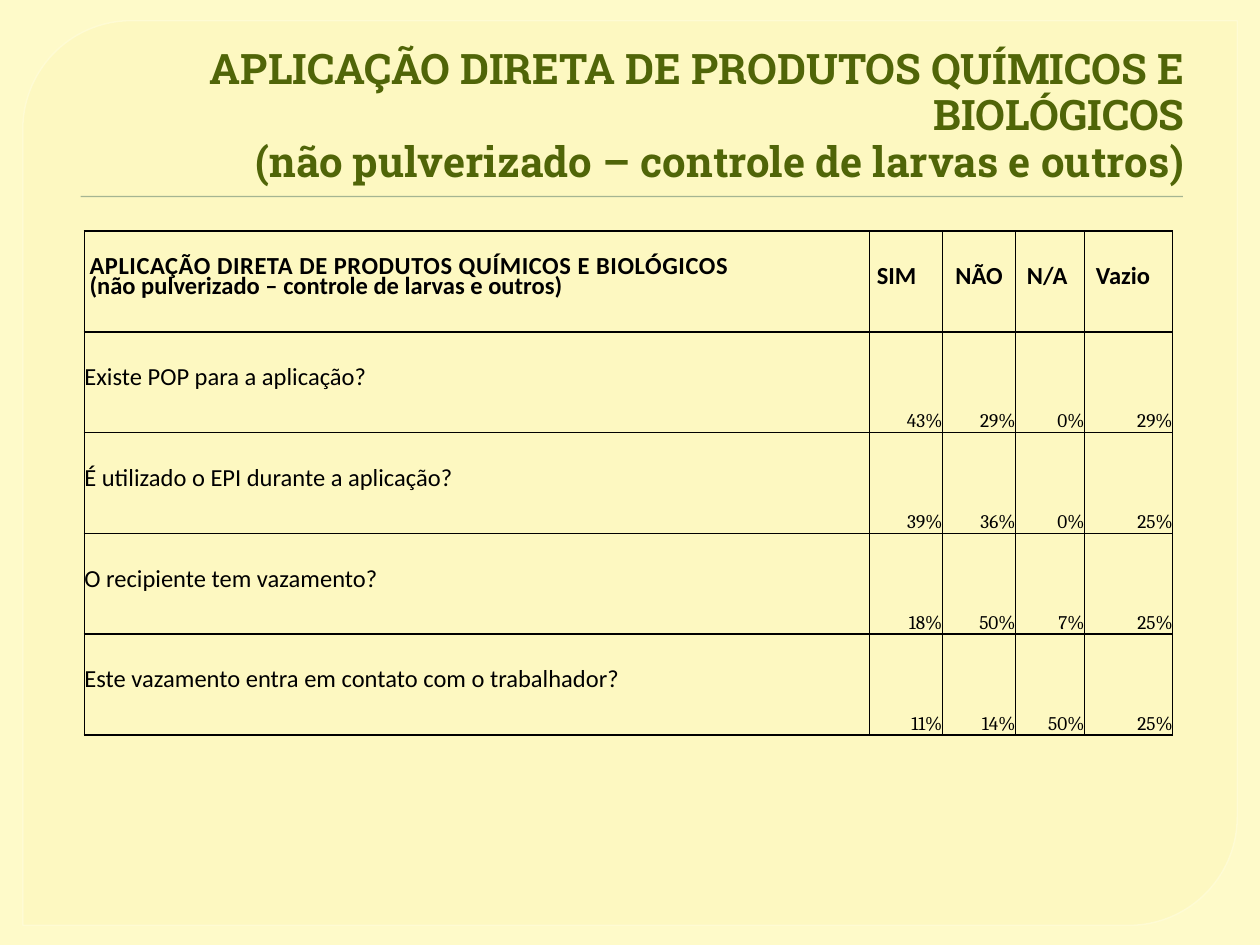
from lxml import etree
from pptx import Presentation
from pptx.dml import color
from pptx.enum import shapes, text
from pptx.oxml import ns
from pptx.util import Pt

HUES = {"page": "FEFAC9", "panel": "FDF8BE", "edge": "FFFCD6",
        "rule": "A5B592", "title": "506508", "ink": "000000"}
LEFT, MID, RIGHT = (text.PP_ALIGN.LEFT, text.PP_ALIGN.CENTER,
                    text.PP_ALIGN.RIGHT)
CENTER, BASE = text.MSO_ANCHOR.MIDDLE, text.MSO_ANCHOR.BOTTOM

TITLE = ("APLICAÇÃO DIRETA DE PRODUTOS QUÍMICOS E BIOLÓGICOS",
         "(não pulverizado – controle de larvas e outros)")
# heading, column width, left inset, alignment
COLS = [(TITLE, 448.6, 3, LEFT), (("SIM",), 41.8, 4.3, LEFT),
        (("NÃO",), 41.8, 0, MID), (("N/A",), 39.4, 6.5, LEFT),
        (("Vazio",), 50.4, 6.5, LEFT)]
ROWS = [("Existe POP para a aplicação?", "43%", "29%", "0%", "29%"),
        ("É utilizado o EPI durante a aplicação?", "39%", "36%", "0%", "25%"),
        ("O recipiente tem vazamento?", "18%", "50%", "7%", "25%"),
        ("Este vazamento entra em contato com o trabalhador?",
         "11%", "14%", "50%", "25%")]
HEAD = {"name": "Calibri", "size": Pt(14), "bold": True}
ASK = {**HEAD, "bold": False}
RATE = {"name": "Cambria", "size": Pt(11), "bold": False}


def rgb(key):
    return color.RGBColor.from_string(HUES[key])


def apply(item, **vals):
    for key, val in vals.items():
        setattr(item, key, val)


def write(para, words, font, hue, **form):
    run = para.add_run()
    run.text = words
    apply(run.font, **font)
    run.font.color.rgb = rgb(hue)
    apply(para, **form)
    return run


def fade(fill, share):
    """Set the opacity of a solid fill, in percent."""
    tone = fill.fore_color._xFill[0]
    etree.SubElement(tone, ns.qn("a:alpha"), val=str(share * 1000))


def block(slide, kind, box, hue):
    item = slide.shapes.add_shape(kind, *map(Pt, box))
    item.shadow.inherit = False
    item.fill.solid()
    item.fill.fore_color.rgb = rgb(hue)
    item.line.fill.background()
    return item


def panel(slide, box):
    kind = shapes.MSO_SHAPE.ROUND_2_DIAG_RECTANGLE
    item = block(slide, kind, box, "panel")
    item.adjustments[0] = 0.12
    item.adjustments[1] = 0
    fade(item.fill, 65)
    item.line.width = Pt(0.87)
    item.line.color.rgb = rgb("edge")
    fade(item.line.fill, 88)


def title(slide, box):
    frame = slide.shapes.add_textbox(*map(Pt, box)).text_frame
    apply(frame, word_wrap=True, vertical_anchor=BASE)
    font = {"name": "Roboto Slab", "size": Pt(24), "bold": True}
    para = frame.paragraphs[0]
    write(para, TITLE[0], font, "title", alignment=RIGHT, line_spacing=0.92)
    para.add_line_break()
    write(para, TITLE[1], font, "title")


def border(cell):
    props = cell._tc.get_or_add_tcPr()
    for side in "LRTB":
        line = etree.SubElement(props, ns.qn("a:ln" + side), w=str(Pt(1)))
        fill = etree.SubElement(line, ns.qn("a:solidFill"))
        etree.SubElement(fill, ns.qn("a:srgbClr"), val=HUES["ink"])


def fit(cell, lines, font, side, anchor, inset=0, gap=Pt(11.2)):
    """Frame one cell and write its lines, one paragraph each."""
    border(cell)
    cell.fill.background()
    apply(cell, margin_left=Pt(inset), margin_right=0, margin_top=0,
          margin_bottom=0, vertical_anchor=anchor)
    frame = cell.text_frame
    paras = [frame.paragraphs[0]] + [frame.add_paragraph() for _ in lines[1:]]
    return [write(para, words, font, "ink", alignment=side, line_spacing=gap)
            for para, words in zip(paras, lines)]


def grid(slide, box):
    table = slide.shapes.add_table(
        len(ROWS) + 1, len(COLS), *map(Pt, box)).table
    apply(table, first_row=False, horz_banding=False)
    for row in table.rows:
        row.height = Pt(box[3] / len(table.rows))
    for c, (lines, width, inset, side) in enumerate(COLS):
        table.columns[c].width = Pt(width)
        runs = fit(table.cell(0, c), lines, HEAD, side, CENTER, inset)
        if c == 0:
            runs[0].font._element.set("spc", "30")
    for r, (ask, *rates) in enumerate(ROWS, 1):
        fit(table.cell(r, 0), [ask], ASK, LEFT, CENTER)
        for c, rate in enumerate(rates, 1):
            fit(table.cell(r, c), [rate], RATE, RIGHT, BASE, gap=1.07)


def main():
    deck = Presentation()
    apply(deck, slide_width=Pt(720), slide_height=Pt(540))
    slide = deck.slides.add_slide(deck.slide_layouts[6])
    slide.background.fill.solid()
    slide.background.fill.fore_color.rgb = rgb("page")
    panel(slide, (13, 11.8, 694, 517))
    block(slide, shapes.MSO_SHAPE.RECTANGLE, (46, 112, 630, 0.72), "rule")
    title(slide, (36, 20, 648, 90))
    grid(slide, (48.2, 132, 622, 288))
    deck.save("out.pptx")


if __name__ == "__main__":
    main()
